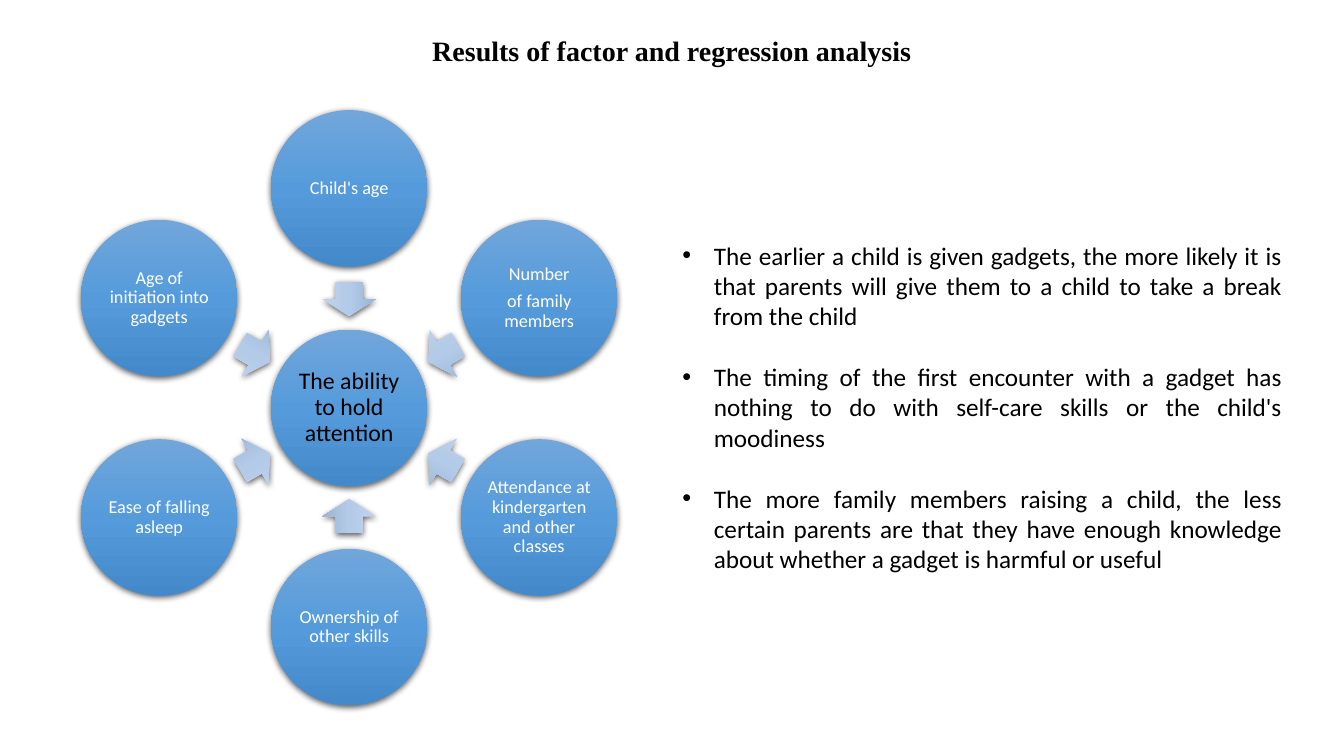
from copy import deepcopy
from dataclasses import dataclass
from math import cos, radians, sin

from lxml import etree
from pptx import Presentation
from pptx import util as u
from pptx.dml import color as dml
from pptx.enum import shapes, text
from pptx.oxml import ns

COLORS = {
    "text": "000000",
    "factor_text": "FFFFFF",
    "shadow": "000000",
    "circle": ("71A6DB", "559BDB", "448ACA"),
    "arrow": ("C0D2EB", "B3CBE9", "9BB4D3"),
}
CENTER_X, CENTER_Y = 249.4, 291.2
RING_RADIUS, ARROW_RADIUS = 156.7, 77.6
CIRCLE_SIZE = 111.7
ARROW_LENGTH, ARROW_WIDTH = 24.3, 38.2
BULLET_INDENT = 22.5


@dataclass
class Factor:
    label: str
    angle: int  # degrees clockwise from the right


FACTORS = [
    Factor("Child's age", 270),
    Factor("Number\nof family members", 330),
    Factor("Attendance at kindergarten and other classes", 30),
    Factor("Ownership of other skills", 90),
    Factor("Ease of falling asleep", 150),
    Factor("Age of initiation into gadgets", 210),
]
FINDINGS = [
    "The earlier a child is given gadgets, the more likely it is that parents "
    "will give them to a child to take a break from the child",
    "The timing of the first encounter with a gadget has nothing to do with "
    "self-care skills or the child's moodiness",
    "The more family members raising a child, the less certain parents are that "
    "they have enough knowledge about whether a gadget is harmful or useful",
]


def rgb(hex_code: str) -> dml.RGBColor:
    return dml.RGBColor.from_string(hex_code)


def place(shape, left: float, top: float, width: float, height: float) -> None:
    shape.left, shape.top = u.Pt(left), u.Pt(top)
    shape.width, shape.height = u.Pt(width), u.Pt(height)


def set_font(paragraph, name: str, size: float, color: str, bold: bool = False) -> None:
    font = paragraph.font
    font.name, font.size, font.bold = name, u.Pt(size), bold
    font.color.rgb = rgb(color)


def add_shadow(shape) -> None:
    shape.shadow.inherit = False
    effects = shape._element.spPr.find(ns.qn("a:effectLst"))
    shadow = etree.SubElement(
        effects, ns.qn("a:outerShdw"), blurRad=str(u.Pt(4.5)), dist=str(u.Pt(1.5)),
        dir="5400000", algn="ctr", rotWithShape="0")
    tint = etree.SubElement(shadow, ns.qn("a:srgbClr"), val=COLORS["shadow"])
    etree.SubElement(tint, ns.qn("a:alpha"), val="63000")


def add_diagram_shape(slide, kind, x: float, y: float, width: float, height: float,
                      gradient: tuple[str, ...]):
    """Add a borderless shape centred on x, y with a vertical gradient and a shadow."""
    shape = slide.shapes.add_shape(
        kind, u.Pt(x - width / 2), u.Pt(y - height / 2), u.Pt(width), u.Pt(height))
    shape.line.fill.background()
    shape.fill.gradient()
    shape.fill.gradient_angle = 270
    stop_list = shape._element.spPr.find(".//" + ns.qn("a:gsLst"))
    stop_list.append(deepcopy(stop_list[0]))
    for index, stop in enumerate(shape.fill.gradient_stops):
        stop.position = index / 2
        stop.color.rgb = rgb(gradient[index])
    add_shadow(shape)
    return shape


def add_circle(slide, x: float, y: float, label: str, size: float, color: str) -> None:
    circle = add_diagram_shape(slide, shapes.MSO_SHAPE.OVAL, x, y,
                               CIRCLE_SIZE, CIRCLE_SIZE, COLORS["circle"])
    frame = circle.text_frame
    frame.word_wrap = True
    frame.vertical_anchor = text.MSO_ANCHOR.MIDDLE
    frame.margin_left = frame.margin_right = u.Pt(1.3)
    frame.margin_top = frame.margin_bottom = u.Pt(1.3)
    frame.text = label
    for paragraph in frame.paragraphs:
        paragraph.alignment = text.PP_ALIGN.CENTER
        paragraph.line_spacing = 0.9
        paragraph.space_after = u.Pt(0.42 * size)
        set_font(paragraph, "Calibri", size, color)


def around_center(angle: int, radius: float) -> tuple[float, float]:
    return (CENTER_X + radius * cos(radians(angle)),
            CENTER_Y + radius * sin(radians(angle)))


def add_factor(slide, factor: Factor) -> None:
    arrow = add_diagram_shape(slide, shapes.MSO_SHAPE.LEFT_ARROW,
                              *around_center(factor.angle, ARROW_RADIUS),
                              ARROW_LENGTH, ARROW_WIDTH, COLORS["arrow"])
    arrow.rotation = factor.angle
    add_circle(slide, *around_center(factor.angle, RING_RADIUS),
               factor.label, 13, COLORS["factor_text"])


def fill_title(title) -> None:
    place(title, 97.2, 19.4, 765.4, 36.7)
    title.text_frame.text = "Results of factor and regression analysis"
    title.text_frame.vertical_anchor = text.MSO_ANCHOR.MIDDLE
    title.text_frame.auto_size = text.MSO_AUTO_SIZE.NONE
    heading = title.text_frame.paragraphs[0]
    heading.alignment = text.PP_ALIGN.CENTER
    heading.line_spacing = 0.9
    set_font(heading, "Times New Roman", 20, COLORS["text"], bold=True)


def fill_findings(body) -> None:
    place(body, 480.2, 167.8, 442.8, 247)
    frame = body.text_frame
    frame.text = "\n".join(FINDINGS)
    frame.auto_size = text.MSO_AUTO_SIZE.NONE
    frame.vertical_anchor = text.MSO_ANCHOR.TOP
    for paragraph in frame.paragraphs:
        paragraph.alignment = text.PP_ALIGN.JUSTIFY
        paragraph.line_spacing = 1.0
        paragraph.space_before = u.Pt(0)
        paragraph.space_after = u.Pt(22)
        set_font(paragraph, "Calibri", 18, COLORS["text"])
        properties = paragraph._p.get_or_add_pPr()
        properties.set("marL", str(u.Pt(BULLET_INDENT)))
        properties.set("indent", str(u.Pt(-BULLET_INDENT)))


def main() -> None:
    deck = Presentation()
    deck.slide_width, deck.slide_height = u.Pt(960), u.Pt(540)
    slide = deck.slides.add_slide(deck.slide_layouts[1])
    fill_title(slide.shapes.title)
    fill_findings(slide.placeholders[1])
    add_circle(slide, CENTER_X, CENTER_Y, "The ability to hold attention",
               17, COLORS["text"])
    for factor in FACTORS:
        add_factor(slide, factor)
    deck.save("out.pptx")


if __name__ == "__main__":
    main()
